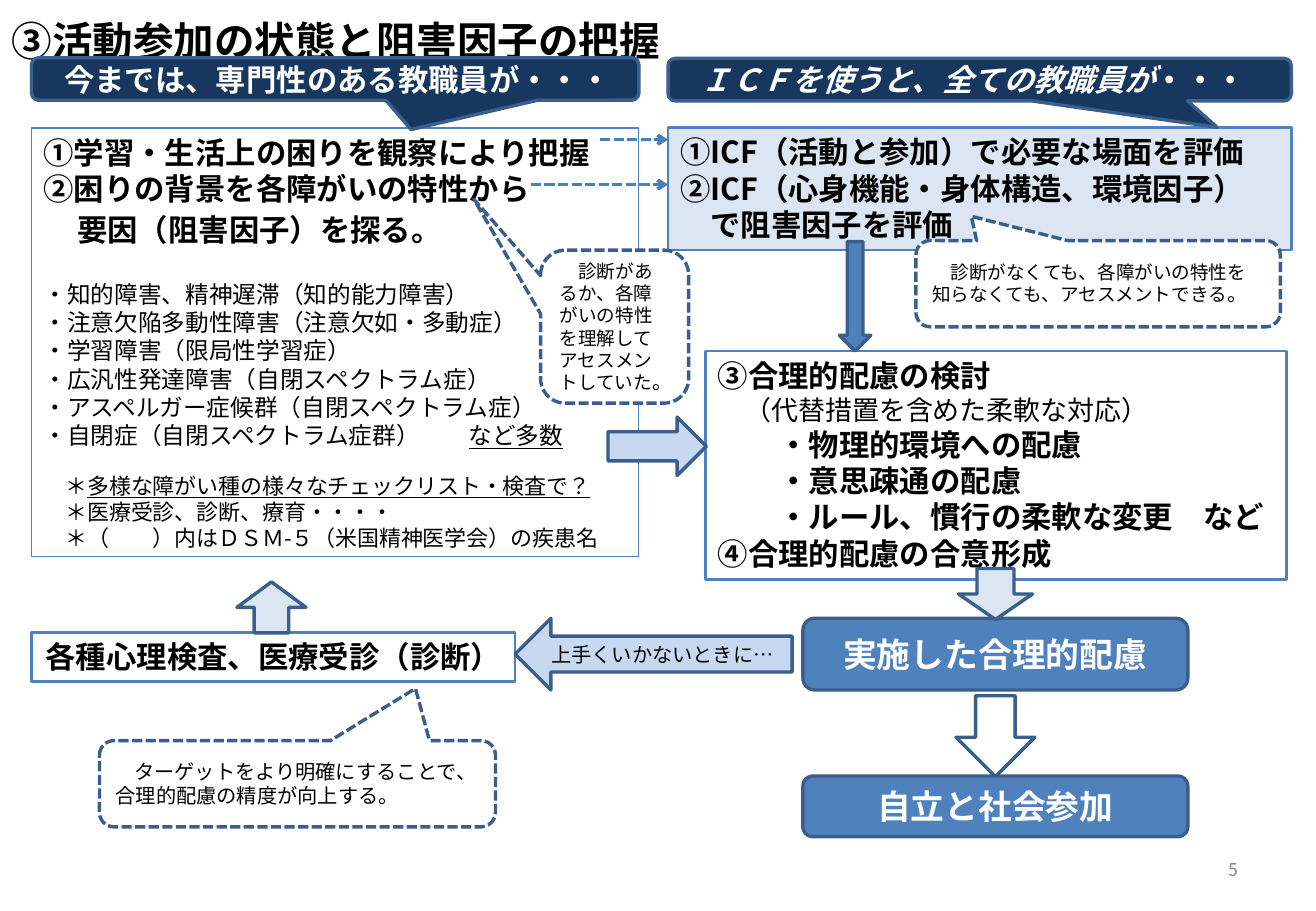
from lxml.etree import SubElement
from pptx import Presentation
from pptx.dml.color import RGBColor
from pptx.enum.dml import MSO_LINE
from pptx.enum.lang import MSO_LANGUAGE_ID
from pptx.enum.shapes import MSO_CONNECTOR, MSO_SHAPE
from pptx.enum.text import MSO_ANCHOR, PP_ALIGN
from pptx.oxml.ns import qn
from pptx.util import Pt

COLORS = {"black": "000000", "white": "FFFFFF", "navy": "17375E", "blue": "4F81BD",
          "outline": "3A5F8C", "dash": "4B7EBC", "pale": "DCE6F2", "light": "C6D9F1",
          "gray": "8C8C8C"}
JAPANESE, LATIN = "Noto Sans CJK JP", "Calibri"
LINE_RATIO = 1.2

# A line is (runs, format); a run is (text, format).
HEAD = dict(size=18, bold=True)
DISORDER = dict(size=14)
REMARK = dict(size=13, indent=13)
MEASURE = dict(HEAD, indent=36)

TITLE = [([("③活動参加の状態と阻害因子の把握", {})], dict(size=24, bold=True, line=34))]
OBSERVATION = [
    ([("①学習・生活上の困りを観察により把握", {})], HEAD),
    ([("②困りの背景を各障がいの特性から", {})], HEAD),
    ([("要因（阻害因子）を探る。", {})], dict(HEAD, indent=20, line=24)),
    ([("・知的障害、精神遅滞（知的能力障害）", {})], dict(DISORDER, before=19)),
    ([("・注意欠陥多動性障害（注意欠如・多動症）", {})], DISORDER),
    ([("・学習障害（限局性学習症）", {})], DISORDER),
    ([("・広汎性発達障害（自閉スペクトラム症）", {})], DISORDER),
    ([("・アスペルガー症候群（自閉スペクトラム症）", {})], DISORDER),
    ([("・自閉症（自閉スペクトラム症群）\t", {}), ("など多数", dict(underline=True))],
     dict(DISORDER, tab=251)),
    ([("＊", {}), ("多様な障がい種の様々なチェックリスト・検査で？", dict(underline=True))],
     dict(REMARK, before=13.5)),
    ([("＊医療受診、診断、療育・・・・", {})], REMARK),
    ([("＊（　　）内はＤＳＭ-５（米国精神医学会）の疾患名", {})], REMARK),
]
ICF = [
    ([("①ICF（活動と参加）で必要な場面を評価", {})], HEAD),
    ([("②ICF（心身機能・身体構造、環境因子）", {})], HEAD),
    ([("で阻害因子を評価", {})], dict(HEAD, indent=18)),
]
ACCOMMODATION = [
    ([("③合理的配慮の検討", {})], HEAD),
    ([("（代替措置を含めた柔軟な対応）", {})], dict(size=16, indent=16)),
    ([("・物理的環境への配慮", {})], MEASURE),
    ([("・意思疎通の配慮", {})], MEASURE),
    ([("・ルール、慣行の柔軟な変更　など", {})], MEASURE),
    ([("④合理的配慮の合意形成", {})], HEAD),
]
EXAMINATION = [([("各種心理検査、医療受診（診断）", {})], dict(HEAD, align=PP_ALIGN.CENTER))]
RESULT = dict(size=20, bold=True, color="white", font=LATIN, align=PP_ALIGN.CENTER)
INDEPENDENCE = [([("自立と社会参加", {})], RESULT)]
IMPLEMENTED = [([("実施した合理的配慮", {})], RESULT)]
RETRY = [([("上手くいかないときに…", {})], dict(size=12, align=PP_ALIGN.CENTER))]
NOTE = dict(size=11, first=11)
PRECISION = [([("ターゲットをより明確にすることで、合理的配慮の精度が向上する。", {})],
              dict(NOTE, size=12))]
WITHOUT_DIAGNOSIS = [
    ([("診断がなくても、各障がいの特性を知らなくても、アセスメントできる", {}),
      ("。", dict(size=12))], NOTE)]
WITH_DIAGNOSIS = [
    ([("診断があるか、各障がいの特性を理解してアセスメントしていた", {}),
      ("。", dict(size=12))], NOTE)]
BANNER = dict(HEAD, color="white", first=11)
BEFORE = [([("今までは、専門性のある教職員が・・・", {})], BANNER)]
AFTER = [([("ＩＣＦを使うと、全ての教職員が", dict(italic=True)), ("・・・", {})], BANNER)]
PAGE = [([("5", {})], dict(size=12, color="gray", font=LATIN, align=PP_ALIGN.RIGHT))]

RECT, ROUND = MSO_SHAPE.RECTANGLE, MSO_SHAPE.ROUNDED_RECTANGLE
DOWN, LEFT = MSO_SHAPE.DOWN_ARROW, MSO_SHAPE.LEFT_ARROW
CALLOUT = MSO_SHAPE.ROUNDED_RECTANGULAR_CALLOUT
BOX = dict(border="blue", weight=1.5, anchor=MSO_ANCHOR.TOP)
BUBBLE = dict(fill="white", dashed=True)

# Back to front: preset, (left, top, width, height), content, style.
SHAPES = [
    (RECT, (18.7, 75.9, 360, 254), OBSERVATION, dict(BOX, weight=0.75)),
    (RECT, (396, 75.6, 369.4, 72.7), ICF, dict(BOX, fill="pale")),
    (RECT, (418.3, 208, 344.2, 135.4), ACCOMMODATION, BOX),
    (DOWN, (566.6, 412.4, 46.8, 48), [], {}),
    (ROUND, (475.9, 460, 228.2, 36), INDEPENDENCE, dict(fill="blue")),
    (ROUND, (475.9, 366.5, 228.2, 42.5), IMPLEMENTED, dict(fill="blue")),
    (RECT, (18.7, 375, 286.6, 29), EXAMINATION, BOX),
    (DOWN, (372.2, 235.4, 34.6, 58.3), [], dict(fill="light", rotation=270)),
    (CALLOUT, (59, 439, 234.7, 51.1), PRECISION, dict(BUBBLE, pointer=(0.298, -1.105))),
    (CALLOUT, (542.9, 142.6, 216, 51.1), WITHOUT_DIAGNOSIS,
     dict(BUBBLE, pointer=(-0.348, -0.782))),
    (DOWN, (497.5, 143.3, 18.7, 64.8), [], dict(fill="blue")),
    (LEFT, (305.3, 366.5, 164.2, 42.5), RETRY, dict(fill="light")),
    (DOWN, (140.4, 344.9, 41, 30.2), [], dict(fill="pale", rotation=180)),
    (CALLOUT, (320.4, 148.3, 87.8, 90.7), WITH_DIAGNOSIS,
     dict(BUBBLE, pointer=(-0.951, -0.834))),
    (DOWN, (568.1, 337, 43.9, 30.2), [], dict(fill="pale")),
    (CALLOUT, (18.7, 34.2, 360, 25.2), BEFORE, dict(fill="navy", pointer=(0.125, 1.19))),
    (CALLOUT, (396, 34.6, 369.4, 25.2), AFTER, dict(fill="navy", pointer=(0.381, 1.122))),
]
TEXT_BOXES = [
    ((0, 0.7, 779.8, 41), TITLE, MSO_ANCHOR.TOP),
    ((558.7, 500.4, 182.2, 28.8), PAGE, MSO_ANCHOR.MIDDLE),
]
DASHED_ARROWS = [(355.7, 82.8), (314.6, 109.4)]  # start x, y
ARROW_END = 396


def rgb(name):
    return RGBColor.from_string(COLORS[name])


def add_run(paragraph, text, size=18, bold=False, italic=False, underline=False,
            color="black", font=JAPANESE):
    run = paragraph.add_run()
    run.text = text
    style = run.font
    style.size, style.bold, style.italic = Pt(size), bold, italic
    style.underline = underline
    style.color.rgb = rgb(color)
    style.name = font
    style.language_id = MSO_LANGUAGE_ID.JAPANESE
    SubElement(style._element, qn("a:ea"), typeface=JAPANESE)


def add_line(paragraph, runs, indent=0, first=0, before=0, tab=None, line=None,
             align=PP_ALIGN.LEFT, **run_format):
    paragraph.alignment = align
    paragraph.line_spacing = Pt(line or run_format["size"] * LINE_RATIO)
    paragraph.space_before = Pt(before)
    properties = paragraph._p.get_or_add_pPr()
    properties.set("marL", str(Pt(indent)))
    properties.set("indent", str(Pt(first)))
    if tab:
        tabs = SubElement(properties, qn("a:tabLst"))
        SubElement(tabs, qn("a:tab"), pos=str(Pt(tab)), algn="l")
    for text, changes in runs:
        add_run(paragraph, text, **{**run_format, **changes})


def write_text(shape, lines, anchor):
    frame = shape.text_frame
    frame.word_wrap = True
    frame.vertical_anchor = anchor
    for number, (runs, line_format) in enumerate(lines):
        paragraph = frame.add_paragraph() if number else frame.paragraphs[0]
        add_line(paragraph, runs, **line_format)


def add_block(slide, preset, place, lines, fill=None, border="outline", weight=2,
              dashed=False, rotation=0, pointer=(), anchor=MSO_ANCHOR.MIDDLE):
    shape = slide.shapes.add_shape(preset, *map(Pt, place))
    shape.shadow.inherit = False
    shape.rotation = rotation
    for index, value in enumerate(pointer):
        shape.adjustments[index] = value
    if fill:
        shape.fill.solid()
        shape.fill.fore_color.rgb = rgb(fill)
    else:
        shape.fill.background()
    shape.line.color.rgb = rgb(border)
    shape.line.width = Pt(weight)
    if dashed:
        shape.line.dash_style = MSO_LINE.SQUARE_DOT
    if lines:
        write_text(shape, lines, anchor)


def add_dashed_arrow(slide, start, y):
    arrow = slide.shapes.add_connector(MSO_CONNECTOR.STRAIGHT, Pt(start), Pt(y),
                                       Pt(ARROW_END), Pt(y))
    arrow.line.color.rgb = rgb("dash")
    arrow.line.width = Pt(2)
    arrow.line.dash_style = MSO_LINE.SQUARE_DOT
    SubElement(arrow.line._get_or_add_ln(), qn("a:tailEnd"), type="arrow")
    SubElement(arrow._element.spPr, qn("a:effectLst"))


def main():
    presentation = Presentation()
    presentation.slide_width, presentation.slide_height = Pt(780), Pt(540)
    slide = presentation.slides.add_slide(presentation.slide_layouts[6])
    for place, lines, anchor in TEXT_BOXES:
        write_text(slide.shapes.add_textbox(*map(Pt, place)), lines, anchor)
    for preset, place, lines, style in SHAPES:
        add_block(slide, preset, place, lines, **style)
    for start, y in DASHED_ARROWS:
        add_dashed_arrow(slide, start, y)
    presentation.save("out.pptx")


if __name__ == "__main__":
    main()
